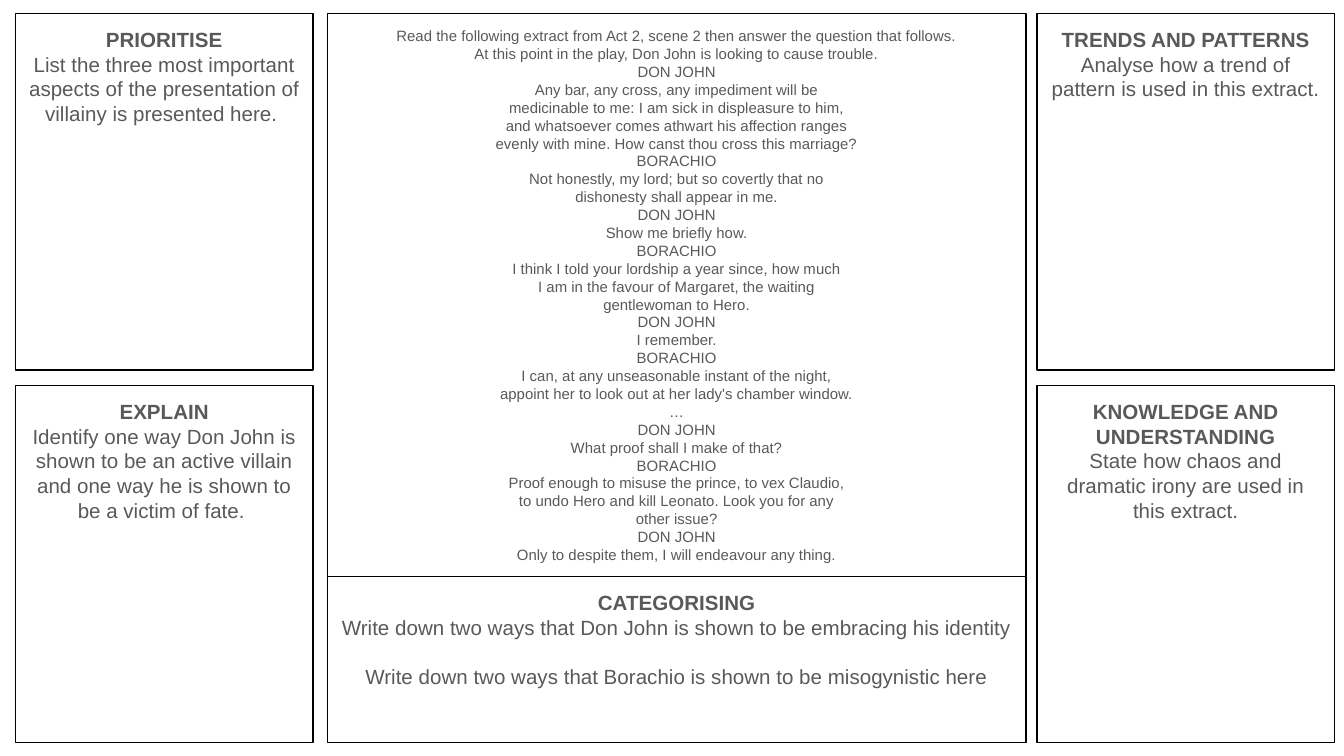
"""Build a revision grid: an extract from the play surrounded by task boxes."""
from dataclasses import dataclass

from pptx import Presentation
from pptx.dml.color import RGBColor
from pptx.enum.shapes import MSO_SHAPE
from pptx.enum.text import MSO_ANCHOR, PP_ALIGN
from pptx.util import Emu, Pt

EMU_PER_PX = 4572
SLIDE_WIDTH, SLIDE_HEIGHT = 2000, 1125
INSET = 20
LEFT_COLUMN, MIDDLE_COLUMN, RIGHT_COLUMN = 23, 487, 1543
SIDE_WIDTH, MIDDLE_WIDTH = 443, 1040
TOP_ROW, BOTTOM_ROW, SIDE_HEIGHT = 20, 574, 531
EXTRACT_HEIGHT, CATEGORISING_HEIGHT = 838, 247
TASK_SIZE, EXTRACT_SIZE = 11, 8
TASK_GAP = 13

WHITE = RGBColor(0xFF, 0xFF, 0xFF)
BLACK = RGBColor(0x00, 0x00, 0x00)
GREY = RGBColor(0x59, 0x59, 0x59)

EXTRACT_OPENING = """Read the following extract from Act 2, scene 2 then answer the question that follows.
At this point in the play, Don John is looking to cause trouble.
DON JOHN
Any bar, any cross, any impediment will be
medicinable to me: I am sick in displeasure to him,
and whatsoever comes athwart his affection ranges
evenly with mine. How canst thou cross this marriage?
BORACHIO
Not honestly, my lord; but so covertly that no
dishonesty shall appear in me.
DON JOHN
Show me briefly how.
BORACHIO
I think I told your lordship a year since, how much
I am in the favour of Margaret, the waiting
gentlewoman to Hero.
DON JOHN
I remember.
BORACHIO
I can, at any unseasonable instant of the night,
appoint her to look out at her lady's chamber window.
…"""

EXTRACT_ENDING = """DON JOHN
What proof shall I make of that?
BORACHIO
Proof enough to misuse the prince, to vex Claudio,
to undo Hero and kill Leonato. Look you for any
other issue?
DON JOHN
Only to despite them, I will endeavour any thing."""


@dataclass(frozen=True)
class Line:
    text: str
    size: int = TASK_SIZE
    bold: bool = False
    space_before: int = 0


@dataclass(frozen=True)
class Box:
    left: int
    top: int
    width: int
    height: int
    lines: tuple[Line, ...]


def px(value: int) -> Emu:
    return Emu(value * EMU_PER_PX)


def task(title: str, *instructions: str) -> tuple[Line, ...]:
    return (Line(title, bold=True),) + tuple(
        Line(text, space_before=TASK_GAP if index else 0)
        for index, text in enumerate(instructions)
    )


def side_box(left: int, top: int, title: str, instruction: str) -> Box:
    return Box(left, top, SIDE_WIDTH, SIDE_HEIGHT, task(title, instruction))


BOXES = (
    side_box(LEFT_COLUMN, TOP_ROW, "PRIORITISE",
             "List the three most important aspects of the presentation of "
             "villainy is presented here. "),
    side_box(LEFT_COLUMN, BOTTOM_ROW, "EXPLAIN",
             "Identify one way Don John is shown to be an active villain "
             "and one way he is shown to be a victim of fate. "),
    side_box(RIGHT_COLUMN, TOP_ROW, "TRENDS AND PATTERNS",
             "Analyse how a trend of pattern is used in this extract."),
    side_box(RIGHT_COLUMN, BOTTOM_ROW, "KNOWLEDGE AND UNDERSTANDING",
             "State how chaos and dramatic irony are used in this extract."),
    Box(MIDDLE_COLUMN, TOP_ROW + EXTRACT_HEIGHT, MIDDLE_WIDTH, CATEGORISING_HEIGHT,
        task("CATEGORISING",
             "Write down two ways that Don John is shown to be embracing his identity",
             "Write down two ways that Borachio is shown to be misogynistic here")),
    Box(MIDDLE_COLUMN, TOP_ROW, MIDDLE_WIDTH, EXTRACT_HEIGHT,
        (Line(EXTRACT_OPENING, EXTRACT_SIZE), Line(EXTRACT_ENDING, EXTRACT_SIZE))),
)


def write_line(paragraph, line: Line) -> None:
    paragraph.text = line.text
    paragraph.alignment = PP_ALIGN.CENTER
    paragraph.space_before = Pt(line.space_before)
    font = paragraph.font
    font.name = "Arial"
    font.size = Pt(line.size)
    font.bold = line.bold
    font.color.rgb = GREY


def draw_box(slide, box: Box) -> None:
    shape = slide.shapes.add_shape(
        MSO_SHAPE.RECTANGLE, px(box.left), px(box.top), px(box.width), px(box.height)
    )
    shape.shadow.inherit = False
    shape.fill.background()
    shape.line.color.rgb = BLACK
    shape.line.width = Pt(0.75)
    frame = shape.text_frame
    frame.word_wrap = True
    frame.vertical_anchor = MSO_ANCHOR.TOP
    frame.margin_left = frame.margin_right = px(INSET)
    frame.margin_top = frame.margin_bottom = px(INSET)
    for index, line in enumerate(box.lines):
        paragraph = frame.add_paragraph() if index else frame.paragraphs[0]
        write_line(paragraph, line)


def main() -> None:
    presentation = Presentation()
    presentation.slide_width = px(SLIDE_WIDTH)
    presentation.slide_height = px(SLIDE_HEIGHT)
    slide = presentation.slides.add_slide(presentation.slide_layouts[6])
    slide.background.fill.solid()
    slide.background.fill.fore_color.rgb = WHITE
    for box in BOXES:
        draw_box(slide, box)
    presentation.save("out.pptx")


if __name__ == "__main__":
    main()
